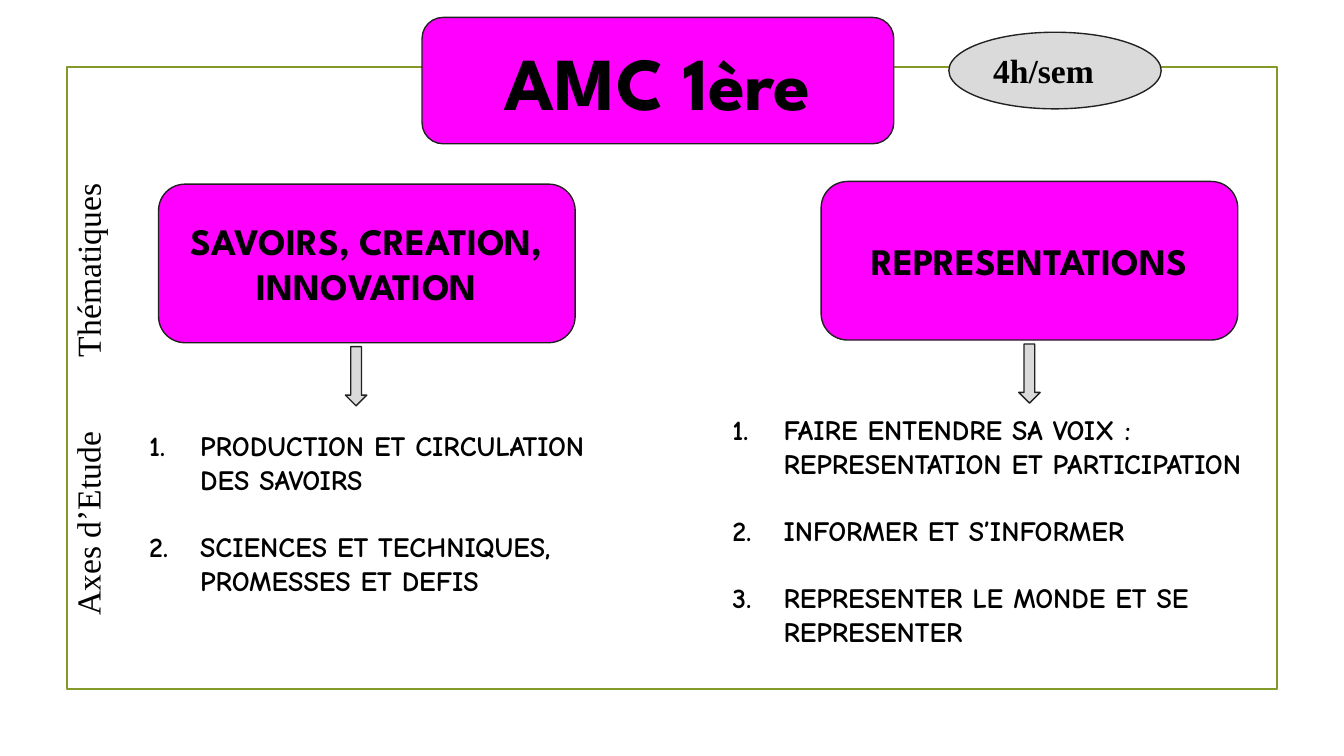
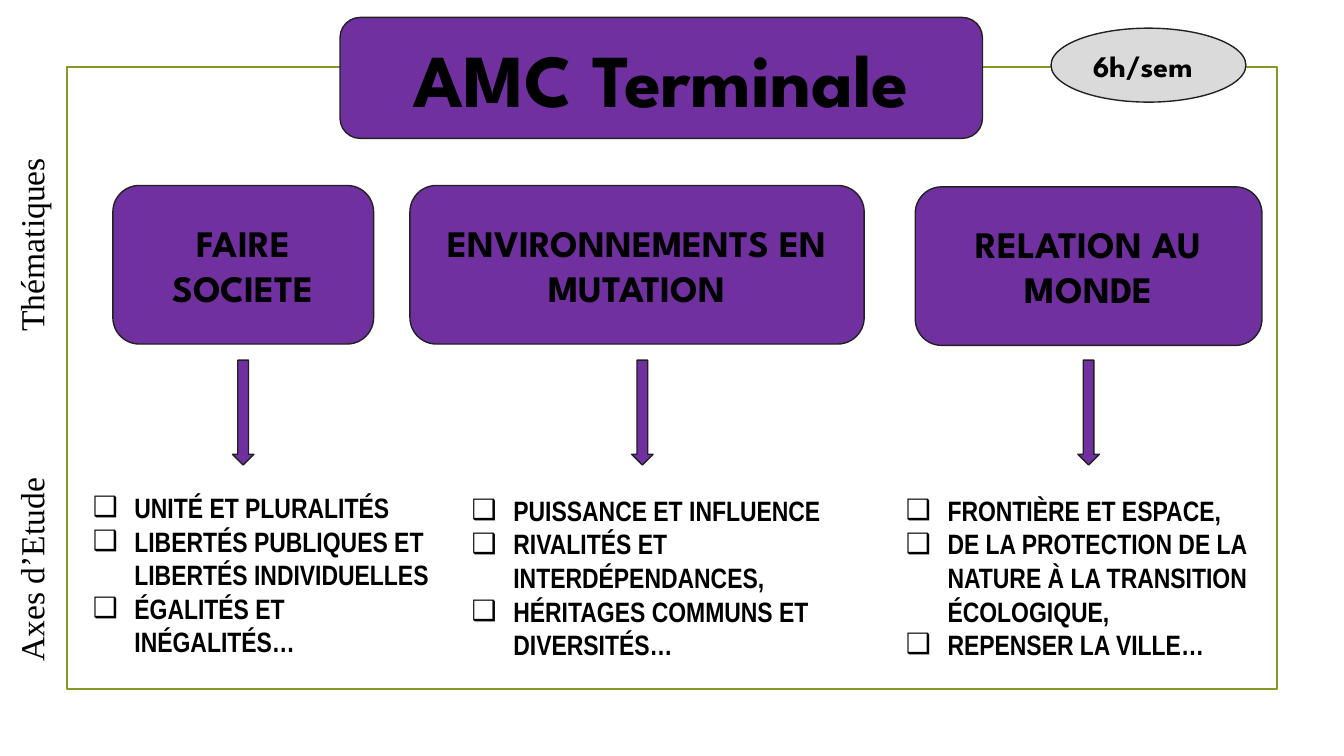
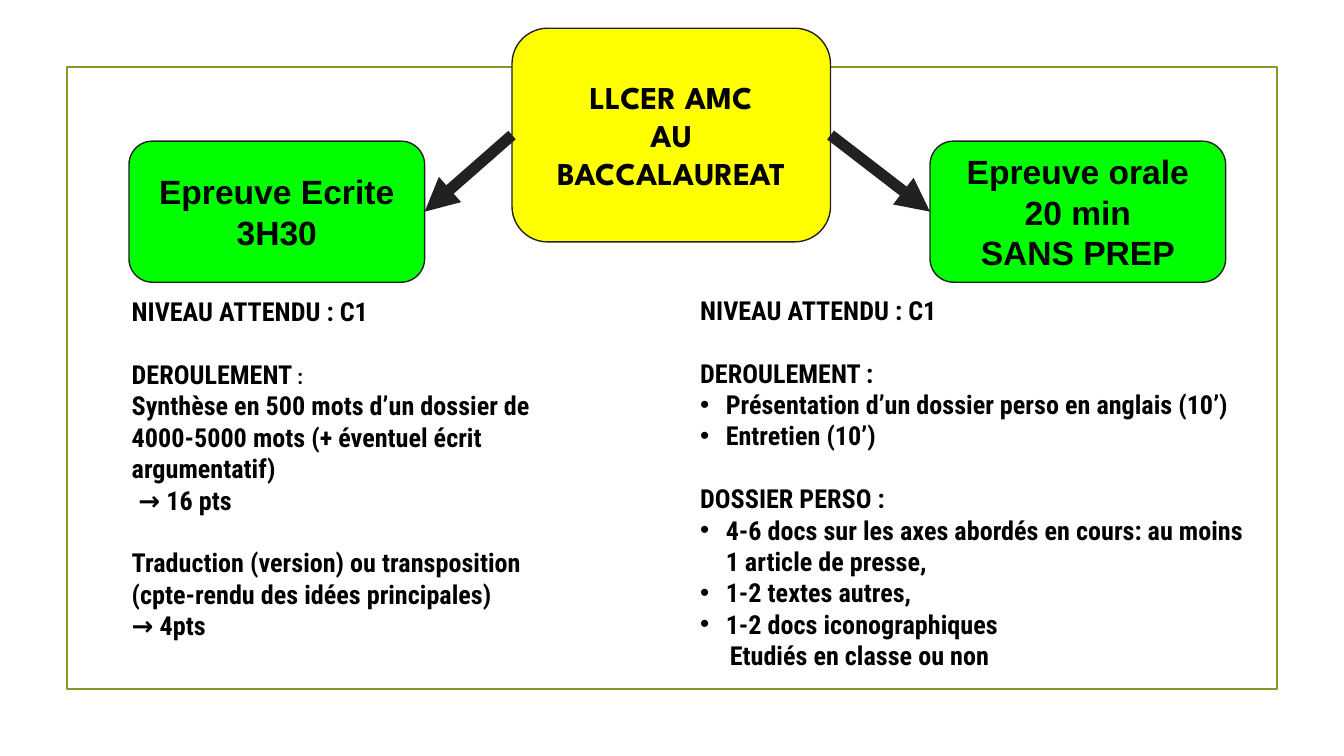
"""Builds three slides on the AMC course: first year, final year and the exam."""
import lxml.etree
import pptx
import pptx.dml.color
import pptx.enum.shapes
import pptx.enum.text
import pptx.oxml.ns
import pptx.util

Inches = pptx.util.Inches
RGBColor = pptx.dml.color.RGBColor
SHAPES = pptx.enum.shapes.MSO_SHAPE
ALIGN = pptx.enum.text.PP_ALIGN
ANCHOR = pptx.enum.text.MSO_ANCHOR
qn = pptx.oxml.ns.qn

BLACK = RGBColor(0x00, 0x00, 0x00)
INK = RGBColor(0x21, 0x21, 0x21)
OLIVE = RGBColor(0x83, 0x99, 0x2A)
GREY = RGBColor(0xDA, 0xDA, 0xDA)
MAGENTA = RGBColor(0xFF, 0x00, 0xFF)
PURPLE = RGBColor(0x70, 0x30, 0xA0)
YELLOW = RGBColor(0xFF, 0xFF, 0x00)
GREEN = RGBColor(0x00, 0xFF, 0x00)

HEADING = "League Spartan"
SERIF = "Times New Roman"
NUMBERED = {"font": "Comic Neue", "size": 15, "marker": "number", "indent": 0.38}
CHECKED = {"font": "Arial Narrow", "size": 15, "marker": "❑", "indent": 0.31}
DETAIL = {"font": "Roboto Condensed", "size": 14}
DOTTED = {**DETAIL, "marker": "•", "indent": 0.19}
DETAIL_GAP = 16.8


def add_span(para, text, *, font, size, bold=True):
    """Add one formatted run to a paragraph."""
    span = para.add_run()
    span.text = text
    span.font.name = font
    span.font.size = pptx.util.Pt(size)
    span.font.bold = bold
    span.font.color.rgb = BLACK


def write(frame, text, *, align=ALIGN.LEFT, marker=None, indent=0, gap=0, **style):
    """Add one paragraph with its marker, indent and space before."""
    first = frame.paragraphs[0]
    para = frame.add_paragraph() if first.runs else first
    para.alignment = align
    para.space_before = pptx.util.Pt(gap)
    para.line_spacing = 1.0
    properties = para._p.get_or_add_pPr()
    properties.set("marL", str(Inches(indent)))
    properties.set("indent", str(-Inches(indent) if marker else 0))
    if marker == "number":
        lxml.etree.SubElement(properties, qn("a:buAutoNum"), type="arabicPeriod")
    elif marker:
        lxml.etree.SubElement(properties, qn("a:buFont"), typeface="Arial")
        lxml.etree.SubElement(properties, qn("a:buChar"), char=marker)
    else:
        lxml.etree.SubElement(properties, qn("a:buNone"))
    add_span(para, text, **style)
    return para


def place(shape, left, top, width, height):
    """Set a shape's position and size in inches."""
    shape.left, shape.top = Inches(left), Inches(top)
    shape.width, shape.height = Inches(width), Inches(height)


def prepare_frame(shape, anchor):
    """Give a shape's text the shared margins, wrapping and anchor."""
    frame = shape.text_frame
    frame.auto_size = pptx.enum.text.MSO_AUTO_SIZE.NONE
    frame.word_wrap = True
    frame.vertical_anchor = anchor
    frame.margin_left = frame.margin_right = Inches(0.1)
    frame.margin_top = frame.margin_bottom = Inches(0.1)
    return frame


def paint(shape, fill, line=INK, weight=0.75):
    """Fill and outline a shape without shadow."""
    if fill is None:
        shape.fill.background()
    else:
        shape.fill.solid()
        shape.fill.fore_color.rgb = fill
    shape.line.color.rgb = line
    shape.line.width = pptx.util.Pt(weight)
    shape.shadow.inherit = False


def add_shape(page, kind, area, fill, lines=(), **style):
    """Add a painted preset shape with optional text."""
    shape = page.shapes.add_shape(kind, *map(Inches, area))
    paint(shape, fill)
    frame = prepare_frame(shape, ANCHOR.MIDDLE)
    for text in lines:
        write(frame, text, **style)
    return shape


def add_card(page, area, fill, *lines, font=HEADING, size=20):
    """Add a rounded card with centred bold text."""
    return add_shape(page, SHAPES.FLOWCHART_ALTERNATE_PROCESS, area, fill, lines,
                     font=font, size=size, align=ALIGN.CENTER)


def set_title(page, area, fill, *lines, size=40):
    """Place the title on a rounded card and return the card."""
    card = add_card(page, area, fill)
    title = page.shapes.title
    place(title, *area)
    title.element.addprevious(card.element)
    frame = prepare_frame(title, ANCHOR.MIDDLE)
    for text in lines:
        write(frame, text, font=HEADING, size=size, align=ALIGN.CENTER)
    return card


def open_list(page, index, area):
    """Place a body placeholder and return its text frame."""
    body = page.placeholders[index]
    place(body, *area)
    return prepare_frame(body, ANCHOR.TOP)


def add_list(page, index, area, items, gap=0, **style):
    """Fill a body placeholder with evenly spaced marked items."""
    frame = open_list(page, index, area)
    for position, text in enumerate(items):
        write(frame, text, gap=gap if position else 0, **style)


def add_side_label(page, text, center_x, center_y, length):
    """Add a label that reads upwards along the frame."""
    height = 0.44
    box = page.shapes.add_textbox(Inches(center_x - length / 2),
                                  Inches(center_y - height / 2),
                                  Inches(length), Inches(height))
    box.rotation = 270
    write(prepare_frame(box, ANCHOR.TOP), text, font=SERIF, size=18, bold=False)


def add_side_labels(page, center_x, themes_y, axes_y):
    """Label the row of themes and the row of study axes."""
    add_side_label(page, "Thématiques", center_x, themes_y, 1.91)
    add_side_label(page, "Axes d’Etude", center_x, axes_y, 2.2)


def add_arrow(page, start, start_side, end, end_side):
    """Join two shapes with a thick arrow."""
    arrow = page.shapes.add_connector(
        pptx.enum.shapes.MSO_CONNECTOR.STRAIGHT, 0, 0, 0, 0)
    arrow.begin_connect(start, start_side)
    arrow.end_connect(end, end_side)
    arrow.line.color.rgb = INK
    arrow.line.width = pptx.util.Pt(6)
    lxml.etree.SubElement(arrow.line._get_or_add_ln(), qn("a:tailEnd"), type="triangle")
    lxml.etree.SubElement(arrow.element.spPr, qn("a:effectLst"))


def add_master_frame(deck, page):
    """Draw the olive frame and move it to the back of the master."""
    frame = page.shapes.add_shape(SHAPES.RECTANGLE, *map(Inches, (0.5, 0.5, 9, 4.63)))
    paint(frame, None, OLIVE, 1.25)
    deck.slide_master.element.cSld.spTree.insert(2, frame.element)


def remove_empty_placeholders(page):
    """Remove the placeholders that hold no text."""
    for placeholder in list(page.placeholders):
        if not placeholder.text_frame.text:
            placeholder.element.getparent().remove(placeholder.element)


def build_first_year(page):
    """Show the two themes of the first year."""
    set_title(page, (3.14, 0.13, 3.51, 0.94), MAGENTA, "AMC 1ère")
    add_card(page, (1.18, 1.37, 3.1, 1.18), MAGENTA, "SAVOIRS, CREATION, INNOVATION")
    add_card(page, (6.11, 1.35, 3.1, 1.18), MAGENTA, "REPRESENTATIONS")
    for left, top in ((2.57, 2.58), (7.58, 2.56)):
        add_shape(page, SHAPES.DOWN_ARROW, (left, top, 0.16, 0.44), GREY)
    add_list(page, 1, (1.01, 3.09, 3.67, 1.46),
             ("PRODUCTION ET CIRCULATION DES SAVOIRS",
              "SCIENCES ET TECHNIQUES, PROMESSES ET DEFIS"), gap=18, **NUMBERED)
    add_list(page, 2, (5.35, 2.97, 4.16, 2.22),
             ("FAIRE ENTENDRE SA VOIX : REPRESENTATION ET PARTICIPATION",
              "INFORMER ET S’INFORMER",
              "REPRESENTER LE MONDE ET SE REPRESENTER"), gap=18, **NUMBERED)
    add_side_labels(page, 0.62, 1.8, 3.58)
    add_shape(page, SHAPES.OVAL, (7.06, 0.24, 1.58, 0.57), GREY, ["4h/sem"],
              font=SERIF, size=18)


def build_final_year(page):
    """Show the three themes of the final year."""
    set_title(page, (2.53, 0.13, 4.78, 0.9), PURPLE, "AMC Terminale")
    themes = (
        ("FAIRE SOCIETE", (0.84, 1.38, 1.94, 1.18), 1.73, (0.59, 3.55, 2.77, 1.72),
         ("UNITÉ ET PLURALITÉS", "LIBERTÉS PUBLIQUES ET LIBERTÉS INDIVIDUELLES",
          "ÉGALITÉS ET INÉGALITÉS…")),
        ("ENVIRONNEMENTS EN MUTATION", (3.05, 1.38, 3.38, 1.18), 4.7,
         (3.41, 3.57, 3.02, 1.46),
         ("PUISSANCE ET INFLUENCE", "RIVALITÉS ET INTERDÉPENDANCES,",
          "HÉRITAGES COMMUNS ET DIVERSITÉS…")),
        ("RELATION AU MONDE", (6.81, 1.39, 2.58, 1.18), 8.02, (6.64, 3.57, 2.9, 1.46),
         ("FRONTIÈRE ET ESPACE,",
          "DE LA PROTECTION DE LA NATURE À LA TRANSITION ÉCOLOGIQUE,",
          "REPENSER LA VILLE…")),
    )
    for index, (theme, card_area, arrow_left, list_area, axes) in enumerate(themes, 1):
        add_card(page, card_area, PURPLE, theme)
        add_shape(page, SHAPES.DOWN_ARROW, (arrow_left, 2.68, 0.16, 0.78), PURPLE)
        add_list(page, index, list_area, axes, **CHECKED)
    add_side_labels(page, 0.2, 1.61, 3.92)
    add_shape(page, SHAPES.OVAL, (7.82, 0.21, 1.45, 0.55), GREY, ["6h/sem"],
              font=HEADING, size=16)


def build_exam(page):
    """Show the written and oral parts of the exam."""
    exam = set_title(page, (3.81, 0.21, 2.37, 1.59), YELLOW,
                     "LLCER AMC", "AU", "BACCALAUREAT", size=17)
    written = add_card(page, (0.96, 1.05, 2.2, 1.05), GREEN, "Epreuve Ecrite 3H30",
                       font="Arial", size=18)
    oral = add_card(page, (6.92, 1.05, 2.2, 1.05), GREEN, "Epreuve orale", "20 min",
                    "SANS PREP", font="Arial", size=18)

    frame = open_list(page, 1, (0.88, 2.1, 3.53, 2.63))
    write(frame, "NIVEAU ATTENDU : C1", **DETAIL)
    course = write(frame, "DEROULEMENT", gap=DETAIL_GAP, **DETAIL)
    add_span(course, " :", font=DETAIL["font"], size=11)
    write(frame, "Synthèse en 500 mots d’un dossier de 4000-5000 mots "
          "(+ éventuel écrit argumentatif)", **DETAIL)
    write(frame, "→ 16 pts", indent=0.05, **DETAIL)
    write(frame, "Traduction (version) ou transposition (cpte-rendu des idées principales)",
          gap=DETAIL_GAP, **DETAIL)
    write(frame, "→ 4pts", **DETAIL)

    frame = open_list(page, 2, (5.11, 2.09, 4.3, 3.03))
    write(frame, "NIVEAU ATTENDU : C1", **DETAIL)
    sections = (
        ("DEROULEMENT :",
         ("Présentation d’un dossier perso en anglais (10’)", "Entretien (10’)")),
        ("DOSSIER PERSO :",
         ("4-6 docs sur les axes abordés en cours: au moins 1 article de presse,",
          "1-2 textes autres,", "1-2 docs iconographiques")),
    )
    for heading, items in sections:
        write(frame, heading, gap=DETAIL_GAP, **DETAIL)
        for text in items:
            write(frame, text, **DOTTED)
    write(frame, "Etudiés en classe ou non", indent=0.22, **DETAIL)

    add_arrow(page, exam, 1, written, 3)
    add_arrow(page, exam, 3, oral, 1)


def main():
    """Build and save the deck."""
    deck = pptx.Presentation()
    deck.slide_width, deck.slide_height = Inches(10), Inches(10 * 9 / 16)
    comparison = deck.slide_layouts[4]
    for number, build in enumerate((build_first_year, build_final_year, build_exam)):
        page = deck.slides.add_slide(comparison)
        if number == 0:
            add_master_frame(deck, page)
        build(page)
        remove_empty_placeholders(page)
    deck.save("out.pptx")


if __name__ == "__main__":
    main()
